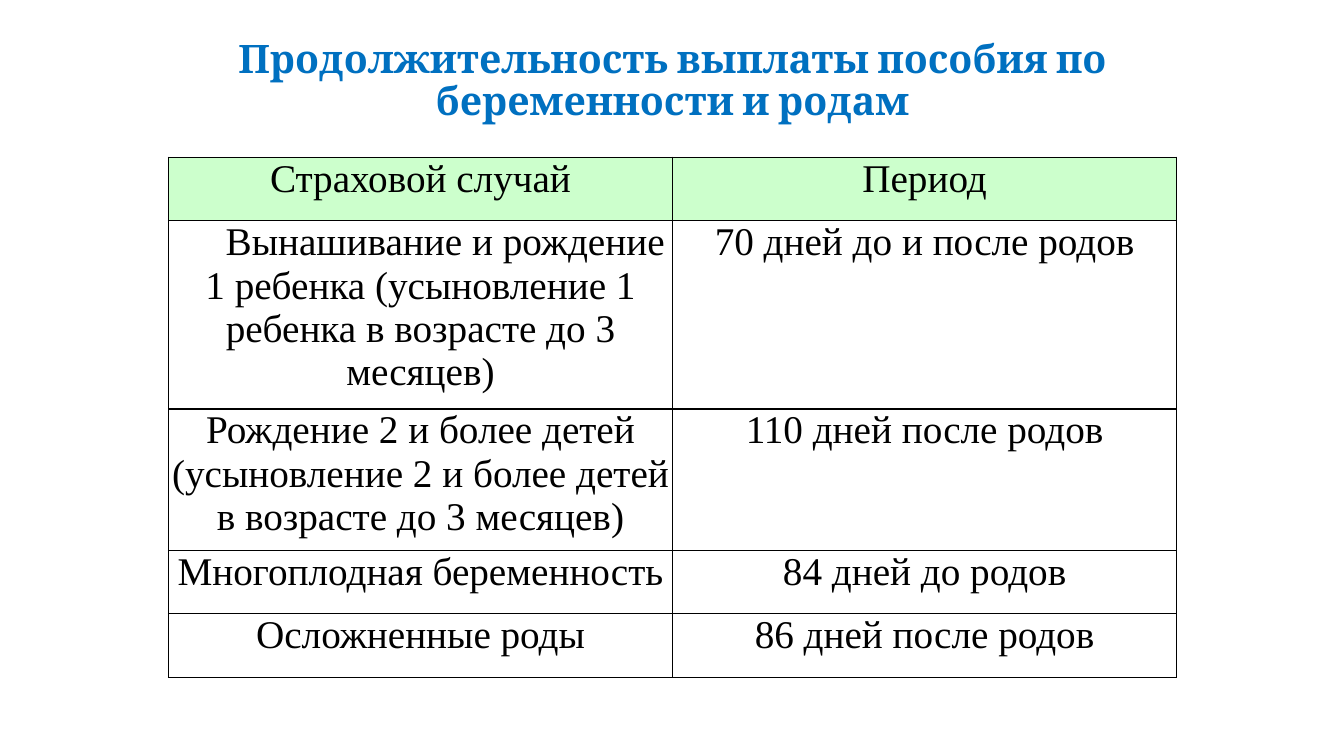
from lxml import etree
from pptx import Presentation
from pptx import util as u
from pptx.dml import color
from pptx.enum import text
from pptx.oxml import ns


def tint(code):
    return color.RGBColor.from_string(code)


def style(para, look):
    para.alignment = text.PP_ALIGN.CENTER
    for key, val in look.items():
        setattr(para.font, key, val)


deck = Presentation()
deck.slide_width = u.Inches(13.33)
deck.slide_height = u.Inches(7.5)
slide = deck.slides.add_slide(deck.slide_layouts[5])

title = slide.shapes.title
place = {"left": 1.67, "top": 0.29, "width": 10, "height": 1.04}
for key, val in place.items():
    setattr(title, key, u.Inches(val))
frame = title.text_frame
frame.text = "Продолжительность выплаты пособия по беременности и родам"
frame.word_wrap = True
frame.auto_size = text.MSO_AUTO_SIZE.SHAPE_TO_FIT_TEXT
frame.vertical_anchor = text.MSO_ANCHOR.MIDDLE
head = frame.paragraphs[0]
head.line_spacing = 0.9
style(head, {"name": "Cambria", "size": u.Pt(28), "bold": True})
head.font.color.rgb = tint("0070C0")

rows = [
    ("Страховой случай", "Период"),
    ("Вынашивание и рождение 1 ребенка (усыновление 1 ребенка в возрасте до 3 месяцев)",
     "70 дней до и после родов"),
    ("Рождение 2 и более детей (усыновление 2 и более детей в возрасте до 3 месяцев)",
     "110 дней после родов"),
    ("Многоплодная беременность", "84 дней до родов"),
    ("Осложненные роды", "86 дней после родов"),
]
tall = [0.63, 0.78, 0.63, 0.63, 0.63]
look = {"name": "Times New Roman", "size": u.Pt(28), "bold": False}
pads = {"margin_left": 0.02, "margin_right": 0.02, "margin_top": 0, "margin_bottom": 0}

grid = slide.shapes.add_table(
    len(rows), 2, u.Inches(1.67), u.Inches(1.56), u.Inches(10), u.Inches(sum(tall))
).table
for r, row in enumerate(rows):
    grid.rows[r].height = u.Inches(tall[r])
    for c, words in enumerate(row):
        cell = grid.cell(r, c)
        cell.text = words
        for key, val in pads.items():
            setattr(cell, key, u.Inches(val))
        props = cell._tc.get_or_add_tcPr()
        for side in ("lnL", "lnR", "lnT", "lnB"):
            line = etree.SubElement(props, ns.qn("a:" + side), w=str(u.Pt(1)))
            fill = etree.SubElement(line, ns.qn("a:solidFill"))
            etree.SubElement(fill, ns.qn("a:srgbClr"), val="000000")
        cell.fill.solid()
        cell.fill.fore_color.rgb = tint("FFFFFF" if r else "CCFFCC")
        para = cell.text_frame.paragraphs[0]
        style(para, look)
        para.font.color.rgb = tint("000000")

first = grid.cell(1, 0).text_frame.paragraphs[0]
first._p.get_or_add_pPr().set("indent", str(u.Inches(0.49)))

deck.save("out.pptx")
